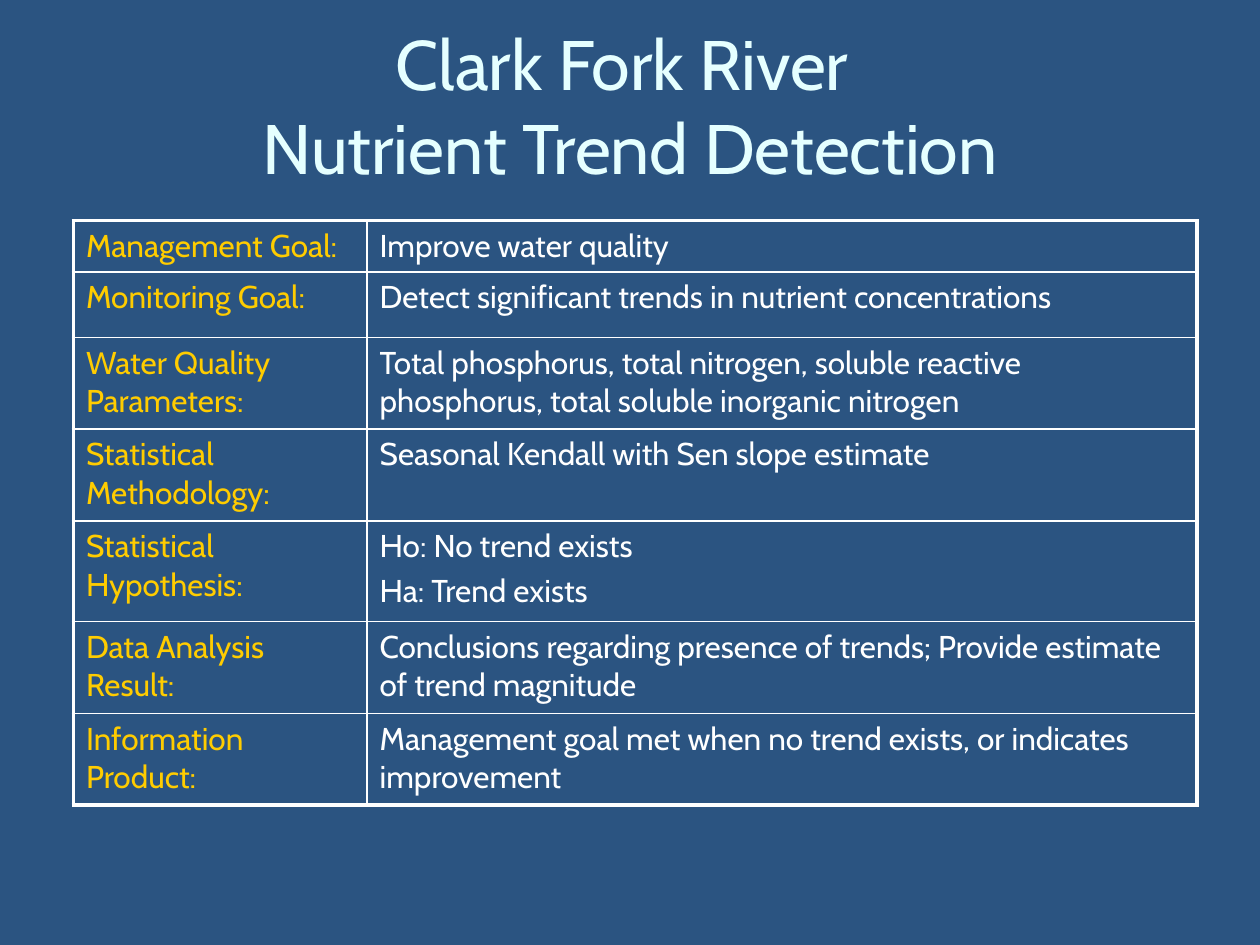
from lxml import etree
from pptx import Presentation
from pptx.dml.color import RGBColor
from pptx.enum.text import MSO_ANCHOR, PP_ALIGN
from pptx.oxml.ns import qn
from pptx.util import Cm, Pt

CENTER, MIDDLE = PP_ALIGN.CENTER, MSO_ANCHOR.MIDDLE
NAVY = RGBColor(0x2B, 0x54, 0x81)
ICE = RGBColor(0xE5, 0xFF, 0xFF)
GOLD = RGBColor(0xFF, 0xCC, 0x00)
WHITE = RGBColor(0xFF, 0xFF, 0xFF)
FONT = "Cabin"
THIN, THICK = Pt(1), Pt(2.25)

# Content: row height in cm, label, lines of text
TITLE = ["Clark Fork River ", "Nutrient Trend Detection"]
ROWS = [
    (0.9, "Management Goal:", ["Improve water quality"]),
    (1.32, "Monitoring Goal:",
     ["Detect significant trends in nutrient concentrations"]),
    (1.85, "Water Quality Parameters:",
     ["Total phosphorus, total nitrogen, soluble reactive phosphorus, "
      "total soluble inorganic nitrogen"]),
    (1.85, "Statistical Methodology:",
     ["Seasonal Kendall with Sen slope estimate"]),
    (2.03, "Statistical Hypothesis:",
     ["Ho: No trend exists", "Ha: Trend exists"]),
    (1.85, "Data Analysis Result:",
     ["Conclusions regarding presence of trends; "
      "Provide estimate of trend magnitude"]),
    (1.85, "Information Product:",
     ["Management goal met when no trend exists, "
      "or indicates improvement"]),
]
COLS = [5.92, 16.73]


def add_run(para, text, size, color):
    run = para.add_run()
    run.text = text
    run.font.name = FONT
    run.font.size = Pt(size)
    run.font.color.rgb = color


def add_edge(cell, side, width):
    props = cell._tc.get_or_add_tcPr()
    line = etree.SubElement(props, qn("a:ln" + side), w=str(width))
    fill = etree.SubElement(line, qn("a:solidFill"))
    etree.SubElement(fill, qn("a:srgbClr"), val=str(WHITE))


def fill_cell(cell, lines, color, edges):
    for side, width in edges.items():
        add_edge(cell, side, width)
    cell.fill.background()
    frame = cell.text_frame
    for i, text in enumerate(lines):
        para = frame.add_paragraph() if i else frame.paragraphs[0]
        if i:
            para.space_before = Pt(3.6)
        add_run(para, text, 18, color)


# Slide
deck = Presentation()
deck.slide_width, deck.slide_height = Cm(25.4), Cm(19.05)
slide = deck.slides.add_slide(deck.slide_layouts[5])
slide.background.fill.solid()
slide.background.fill.fore_color.rgb = NAVY

# Title
title = slide.shapes.title
title.left, title.top = Cm(1.27), Cm(0.2)
title.width, title.height = Cm(22.86), Cm(3.81)
frame = title.text_frame
frame.word_wrap = True
frame.vertical_anchor = MIDDLE
para = frame.paragraphs[0]
para.alignment = CENTER
for i, text in enumerate(TITLE):
    if i:
        para.add_line_break()
    add_run(para, text, 40, ICE)

# Table with a thick outer frame
high = sum(row[0] for row in ROWS)
table = slide.shapes.add_table(
    len(ROWS), len(COLS), Cm(1.48), Cm(4.45), Cm(sum(COLS)), Cm(high)).table
table.first_row = table.horz_banding = False
for col, width in zip(table.columns, COLS):
    col.width = Cm(width)
last = len(ROWS) - 1
for r, (height, label, lines) in enumerate(ROWS):
    table.rows[r].height = Cm(height)
    for c, (texts, color) in enumerate([([label], GOLD), (lines, WHITE)]):
        edges = {
            "L": THIN if c else THICK,
            "R": THICK if c else THIN,
            "T": THIN if r else THICK,
            "B": THICK if r == last else THIN,
        }
        fill_cell(table.cell(r, c), texts, color, edges)

deck.save("out.pptx")
